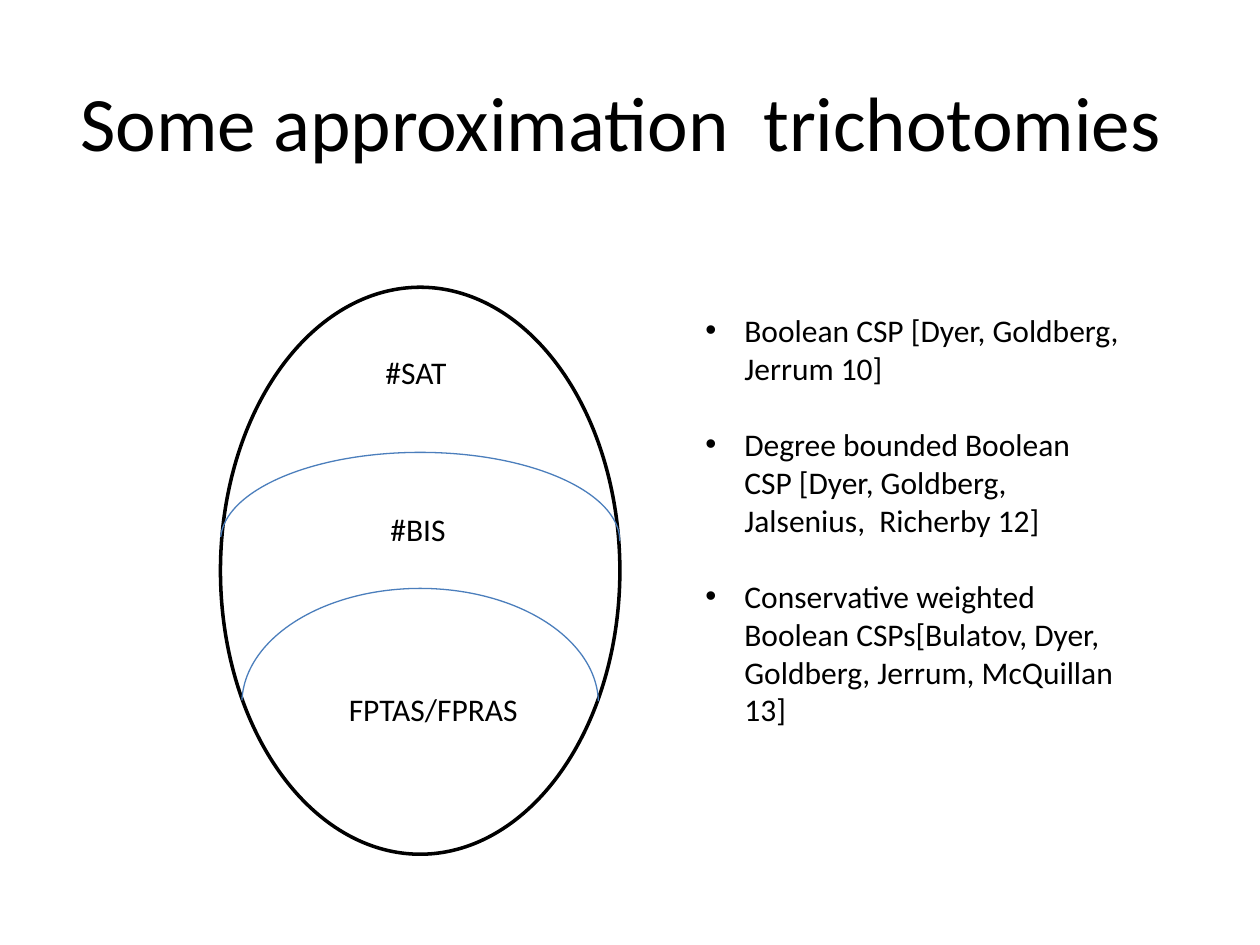
from dataclasses import dataclass

from lxml.etree import SubElement
from pptx import Presentation
from pptx.dml.color import RGBColor
from pptx.enum.shapes import MSO_SHAPE
from pptx.enum.text import MSO_ANCHOR, PP_ALIGN
from pptx.oxml.ns import qn
from pptx.util import Inches, Pt


@dataclass(frozen=True)
class Theme:
    """Colours, font and type sizes of the slide."""
    ink: RGBColor = RGBColor(0x00, 0x00, 0x00)
    paper: RGBColor = RGBColor(0xFF, 0xFF, 0xFF)
    divider: RGBColor = RGBColor(0x4B, 0x7E, 0xBC)
    font: str = "Calibri"
    title_size: int = 44
    body_size: int = 18
    bullet_gap: int = 22


THEME = Theme()

CLASSES = [
    ("#SAT", (2.96, 2.75, 1.08, 0.4)),
    ("#BIS", (3, 4, 1.25, 0.4)),
    ("FPTAS/FPRAS", (2.67, 5.43, 1.67, 0.4)),
]
DIVIDERS = [
    ((1.92, 4.67, 2.83, 1.83), (181.05, 359.15)),
    ((1.75, 3.59, 3.17, 1.41), (181.24, 0)),
]
RESULTS = [
    "Boolean CSP [Dyer, Goldberg, Jerrum 10]",
    "Degree bounded Boolean CSP [Dyer, Goldberg, Jalsenius,  Richerby 12]",
    "Conservative weighted Boolean CSPs[Bulatov, Dyer, Goldberg, Jerrum, McQuillan 13]",
]


def add_bullet(paragraph):
    """Give a paragraph a round bullet with a hanging indent."""
    properties = paragraph._p.get_or_add_pPr()
    properties.set("marL", str(Inches(0.31)))
    properties.set("indent", str(-Inches(0.31)))
    SubElement(properties, qn("a:buFont"), typeface="Arial")
    SubElement(properties, qn("a:buChar"), char="•")


def add_text(slide, box, lines, size=THEME.body_size, align=PP_ALIGN.LEFT,
             anchor=MSO_ANCHOR.TOP, bullets=False, gap=0):
    """Add a wrapped text box with one paragraph per line."""
    frame = slide.shapes.add_textbox(*map(Inches, box)).text_frame
    frame.word_wrap = True
    frame.vertical_anchor = anchor
    for index, line in enumerate(lines):
        paragraph = frame.add_paragraph() if index else frame.paragraphs[0]
        paragraph.alignment = align
        paragraph.space_before = Pt(gap if index else 0)
        run = paragraph.add_run()
        run.text = line
        run.font.name = THEME.font
        run.font.size = Pt(size)
        run.font.color.rgb = THEME.ink
        if bullets:
            add_bullet(paragraph)


def add_outline(slide, kind, box, color, width):
    """Add an unfilled, shadowless outlined shape."""
    outline = slide.shapes.add_shape(kind, *map(Inches, box))
    outline.shadow.inherit = False
    outline.fill.background()
    outline.line.color.rgb = color
    outline.line.width = Pt(width)
    return outline


def add_universe(slide, box):
    """Add the ellipse that holds all the complexity classes."""
    universe = add_outline(slide, MSO_SHAPE.OVAL, box, THEME.ink, 2)
    universe.fill.solid()
    universe.fill.fore_color.rgb = THEME.paper


def add_divider(slide, box, angles):
    """Add an arc between two angles in degrees."""
    divider = add_outline(slide, MSO_SHAPE.ARC, box, THEME.divider, 0.75)
    for index, angle in enumerate(angles):
        divider.adjustments[index] = angle * 0.6


def main():
    """Build the slide and save it."""
    deck = Presentation()
    deck.slide_width, deck.slide_height = Inches(10), Inches(7.5)
    slide = deck.slides.add_slide(deck.slide_layouts[6])
    add_universe(slide, (1.75, 2.28, 3.17, 4.5))
    add_text(slide, (0.5, 0.33, 9, 1.25), ["Some approximation  trichotomies "],
             size=THEME.title_size, align=PP_ALIGN.CENTER, anchor=MSO_ANCHOR.MIDDLE)
    for box, angles in DIVIDERS:
        add_divider(slide, box, angles)
    for name, box in CLASSES:
        add_text(slide, box, [name])
    add_text(slide, (5.5, 2.42, 3.5, 3.74), RESULTS, bullets=True, gap=THEME.bullet_gap)
    deck.save("out.pptx")


if __name__ == "__main__":
    main()
